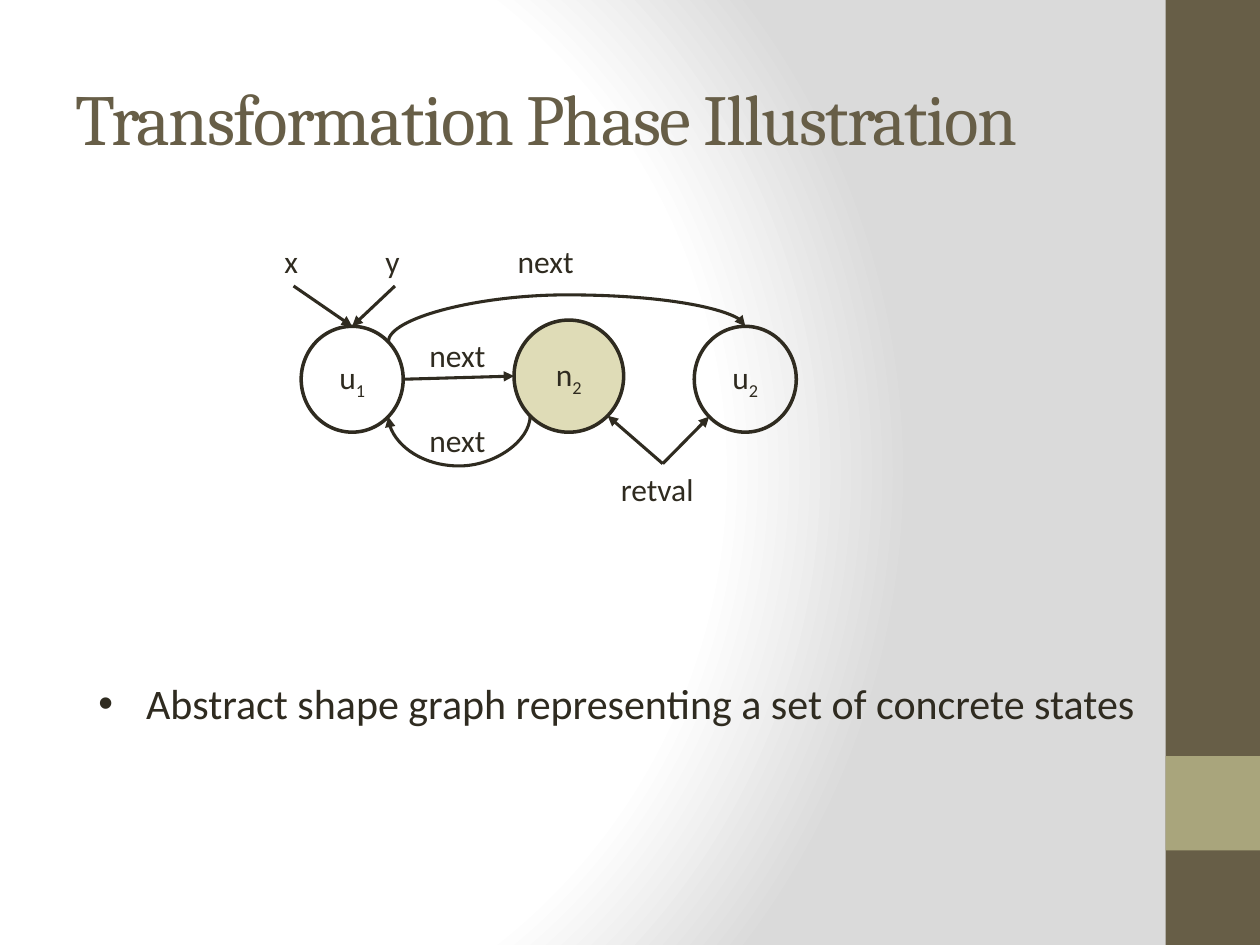
import math

import lxml.etree
import pptx
import pptx.dml.color
import pptx.enum.shapes
import pptx.enum.text
import pptx.oxml
import pptx.oxml.ns
import pptx.util

Inches = pptx.util.Inches
Pt = pptx.util.Pt
SHAPES = pptx.enum.shapes.MSO_SHAPE
CONNECTORS = pptx.enum.shapes.MSO_CONNECTOR
ANCHOR = pptx.enum.text.MSO_ANCHOR
ALIGN = pptx.enum.text.PP_ALIGN
qn = pptx.oxml.ns.qn

COLORS = {
    "ink": "2F2B20",
    "brown": "675E47",
    "olive": "A9A57C",
    "sand": "DFDCB7",
    "white": "FFFFFF",
    "gray": "DADADA",
}


def rgb(name):
    return pptx.dml.color.RGBColor.from_string(COLORS[name])


def style(run, size, color="ink", font="Calibri"):
    run.font.size = Pt(size)
    run.font.name = font
    run.font.color.rgb = rgb(color)


def place(shape, box):
    shape.left, shape.top, shape.width, shape.height = box


def paint_background(slide):
    slide.background.fill.solid()
    solid = next(slide.element.iter(qn("a:solidFill")))
    stops = "".join(
        f'<a:gs pos="{position * 1000}"><a:srgbClr val="{COLORS[color]}"/></a:gs>'
        for position, color in ((0, "white"), (75, "white"), (100, "gray"))
    )
    gradient = pptx.oxml.parse_xml(
        f'<a:gradFill {pptx.oxml.ns.nsdecls("a")} rotWithShape="1">'
        f'<a:gsLst>{stops}</a:gsLst><a:path path="circle">'
        '<a:fillToRect l="20000" t="50000" r="100000" b="50000"/></a:path></a:gradFill>'
    )
    solid.getparent().replace(solid, gradient)


def add_sidebar(slide, left, top, width, height):
    square = (left, top + Inches(6), width, width)
    for box, color in (((left, top, width, height), "brown"), (square, "olive")):
        band = slide.shapes.add_shape(SHAPES.RECTANGLE, *box)
        band.shadow.inherit = False
        band.fill.solid()
        band.fill.fore_color.rgb = rgb(color)
        band.line.fill.background()


def add_title(slide, *box):
    title = slide.shapes.title
    place(title, box)
    frame = title.text_frame
    frame.text = "Transformation Phase Illustration"
    frame.vertical_anchor = ANCHOR.MIDDLE
    frame.paragraphs[0].alignment = ALIGN.LEFT
    run = frame.paragraphs[0].runs[0]
    style(run, 41, "brown", "Cambria")
    run._r.get_or_add_rPr().set("spc", "-100")


def add_summary(slide, *box):
    summary = slide.placeholders[1]
    place(summary, box)
    frame = summary.text_frame
    frame.text = "Abstract shape graph representing a set of concrete states"
    frame.word_wrap = True
    frame.margin_right = 0
    paragraph = frame.paragraphs[0]
    paragraph.space_before = Pt(0)
    style(paragraph.runs[0], 24)
    properties = paragraph._p.get_or_add_pPr()
    properties.set("marL", str(Inches(0.38)))
    properties.set("indent", str(-Inches(0.38)))
    lxml.etree.SubElement(properties, qn("a:buChar")).set("char", "•")


def add_node(shapes, letter, index, box, fill=None):
    node = shapes.add_shape(SHAPES.OVAL, *box)
    node.shadow.inherit = False
    if fill:
        node.fill.solid()
        node.fill.fore_color.rgb = rgb(fill)
    else:
        node.fill.background()
    node.line.color.rgb = rgb("ink")
    node.line.width = Pt(2)
    frame = node.text_frame
    frame.vertical_anchor = ANCHOR.MIDDLE
    paragraph = frame.paragraphs[0]
    paragraph.text = letter
    paragraph.alignment = ALIGN.CENTER
    subscript = paragraph.add_run()
    subscript.text = index
    for run in paragraph.runs:
        style(run, 18)
    subscript._r.get_or_add_rPr().set("baseline", "-25000")
    return node


def add_label(shapes, text, box):
    label = shapes.add_textbox(*box)
    frame = label.text_frame
    frame.word_wrap = True
    frame.vertical_anchor = ANCHOR.MIDDLE
    frame.text = text
    style(frame.paragraphs[0].runs[0], 18)
    return label


def rim(node, degrees):
    angle = math.radians(degrees)
    return (
        round(node.left + node.width / 2 * (1 + math.cos(angle))),
        round(node.top + node.height / 2 * (1 - math.sin(angle))),
    )


def add_arrow(shapes, start, end, kind=CONNECTORS.STRAIGHT):
    arrow = shapes.add_connector(kind, *start, *end)
    arrow.line.color.rgb = rgb("ink")
    arrow.line.width = Pt(1.75)
    properties = arrow._element.spPr
    tail = lxml.etree.SubElement(properties.find(qn("a:ln")), qn("a:tailEnd"))
    tail.set("type", "triangle")
    lxml.etree.SubElement(properties, qn("a:effectLst"))
    return arrow


def add_pointer(shapes, label, side, target):
    edge = label.top if side == 0 else label.top + label.height
    start = (label.left + label.width // 2, edge)
    add_arrow(shapes, start, target).begin_connect(label, side)


def add_arc(shapes, start, end, crest):
    (x1, y1), (x2, y2) = start, end
    across, down = x2 - x1, y2 - y1
    middle_x, middle_y = (x1 + x2) / 2, (y1 + y2) / 2
    arc = add_arrow(
        shapes,
        (round(middle_x - down / 2), round(middle_y + across / 2)),
        (round(middle_x + down / 2), round(middle_y - across / 2)),
        CONNECTORS.CURVE,
    )
    properties = arc._element.spPr
    properties.find(qn("a:xfrm")).set("rot", str(90 * 60000))
    guides = properties.find(qn("a:prstGeom")).find(qn("a:avLst"))
    guide = lxml.etree.SubElement(guides, qn("a:gd"))
    guide.set("name", "adj1")
    guide.set("fmla", f"val {round((crest - y1) / down * 100000)}")


def add_shape_graph(slide, left, top):
    shapes = slide.shapes.add_group_shape().shapes

    def box(x, y, width, height):
        return left + Inches(x), top + Inches(y), Inches(width), Inches(height)

    u1 = add_node(shapes, "u", "1", box(0.23, 0.72, 0.81, 0.84))
    u2 = add_node(shapes, "u", "2", box(3.35, 0.72, 0.81, 0.84))
    n2 = add_node(shapes, "n", "2", box(1.92, 0.67, 0.87, 0.89), "sand")

    x = add_label(shapes, "x", box(0, 0, 0.34, 0.4))
    y = add_label(shapes, "y", box(0.8, 0, 0.35, 0.4))
    retval = add_label(shapes, "retval", box(2.67, 1.81, 0.86, 0.4))
    for next_box in ((1.85, 0, 0.72, 0.4), (1.15, 0.75, 0.77, 0.4), (1.15, 1.42, 0.77, 0.4)):
        add_label(shapes, "next", box(*next_box))

    for variable in (x, y):
        add_pointer(shapes, variable, 2, rim(u1, 90))
    add_pointer(shapes, retval, 0, rim(n2, -45))
    add_pointer(shapes, retval, 0, rim(u2, -135))
    add_arrow(shapes, rim(u1, 0), rim(n2, 180))
    add_arc(shapes, rim(u1, 45), rim(u2, 90), top + Inches(0.47))
    add_arc(shapes, rim(n2, -135), rim(u1, -45), top + Inches(1.82))


def main():
    deck = pptx.Presentation()
    deck.slide_width, deck.slide_height = Inches(10), Inches(7.5)
    slide = deck.slides.add_slide(deck.slide_layouts[1])
    paint_background(slide)
    add_sidebar(slide, Inches(9.25), 0, Inches(0.75), deck.slide_height)
    add_title(slide, Inches(0.5), Inches(0.3), Inches(8.33), Inches(1.25))
    add_summary(slide, Inches(0.68), Inches(5.33), Inches(8.5), Inches(0.5))
    add_shape_graph(slide, Inches(2.16), Inches(1.87))
    deck.save("out.pptx")


if __name__ == "__main__":
    main()
